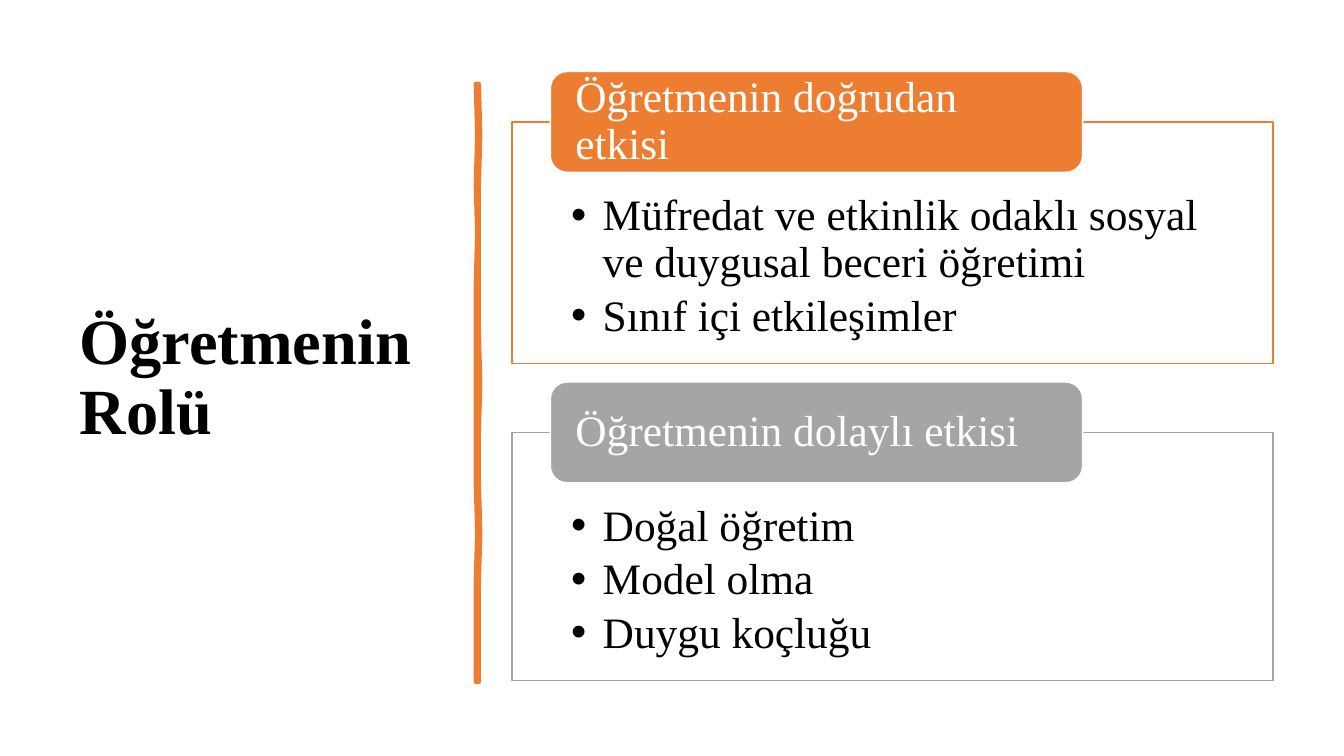
from lxml.etree import SubElement
from pptx import Presentation
from pptx.dml.color import RGBColor
from pptx.enum.shapes import MSO_SHAPE
from pptx.enum.text import MSO_ANCHOR, MSO_AUTO_SIZE, PP_ALIGN
from pptx.oxml.ns import qn
from pptx.util import Pt

# Content
TITLE = "Öğretmenin Rolü"
ORANGE, GRAY, WHITE, BLACK = "ED7D31", "A5A5A5", "FFFFFF", "000000"
PANELS = [  # heading, colour, top and height of the frame, bullets
    ("Öğretmenin doğrudan etkisi", ORANGE, 87.1, 172.8,
     ["Müfredat ve etkinlik odaklı sosyal ve duygusal beceri öğretimi",
      "Sınıf içi etkileşimler"]),
    ("Öğretmenin dolaylı etkisi", GRAY, 308.9, 177.1,
     ["Doğal öğretim", "Model olma", "Duygu koçluğu"]),
]

# Layout, in points
FRAME_LEFT, FRAME_WIDTH = 365.8, 543.6
TAB_LEFT, TAB_WIDTH, TAB_HEIGHT = 393.1, 380.2, 72
BAR_TOP, BAR_BOTTOM, BAR_LEFT, BAR_RIGHT = 60.5, 486.7, 340.4, 341.9
LEFT_WAVE = [0, 0.5, 0, 0.3, -0.6, 0, 0, -0.6, 0, 0.4, 0, -0.5, 0]
RIGHT_WAVE = [0, 0.7, 0, 0.5, 0, 0, 0.7, -0.4, 0, 0.7, 0, 0, 0]


def color(hex_code):
    return RGBColor.from_string(hex_code)


def paint(s, fill, line, width):
    s.shadow.inherit = False
    s.fill.solid()
    s.fill.fore_color.rgb = color(fill)
    s.line.color.rgb = color(line)
    s.line.width = Pt(width)


def set_frame(tf, anchor, margins):
    tf.word_wrap = True
    tf.auto_size = MSO_AUTO_SIZE.NONE
    tf.vertical_anchor = anchor
    for side, value in zip(("left", "top", "right", "bottom"), margins):
        setattr(tf, f"margin_{side}", Pt(value))


def write(p, text, size, ink, bold=False, before=0):
    p.alignment, p.line_spacing, p.space_before = PP_ALIGN.LEFT, 0.9, Pt(before)
    r = p.add_run()
    r.text = text
    font = {"name": "Times New Roman", "size": Pt(size), "bold": bold}
    for key, value in font.items():
        setattr(r.font, key, value)
    r.font.color.rgb = color(ink)


def add_bullet(p):
    pPr = p._p.get_or_add_pPr()
    pPr.set("marL", str(Pt(22.5)))
    pPr.set("indent", str(-Pt(22.5)))
    SubElement(pPr, qn("a:buFont"), typeface="Arial")
    SubElement(pPr, qn("a:buChar"), char="•")


prs = Presentation()
prs.slide_width, prs.slide_height = Pt(960), Pt(540)
slide = prs.slides.add_slide(prs.slide_layouts[5])

# Title
title = slide.shapes.title
title.left, title.top, title.width, title.height = Pt(49.7), Pt(50.4), Pt(269.3), Pt(440)
set_frame(title.text_frame, MSO_ANCHOR.MIDDLE, (7.2, 3.6, 7.2, 3.6))
write(title.text_frame.paragraphs[0], TITLE, 46, BLACK, bold=True)

# Hand-drawn divider: down the right edge, back up the left
step = (BAR_BOTTOM - BAR_TOP) / (len(LEFT_WAVE) - 1)
right = [(BAR_RIGHT + dx, BAR_TOP + i * step) for i, dx in enumerate(RIGHT_WAVE)]
left = [(BAR_LEFT + dx, BAR_TOP + i * step) for i, dx in enumerate(LEFT_WAVE)]
outline = slide.shapes.build_freeform(*right[0], scale=Pt(1))
outline.add_line_segments(right[1:] + left[::-1], close=True)
paint(outline.convert_to_shape(), ORANGE, ORANGE, 3.25)

# Panels: framed bullets with a heading tab across the top edge
for heading, accent, top, height, bullets in PANELS:
    frame = slide.shapes.add_shape(MSO_SHAPE.RECTANGLE, Pt(FRAME_LEFT), Pt(top),
                                   Pt(FRAME_WIDTH), Pt(height))
    paint(frame, WHITE, accent, 1)
    alpha = frame.fill._xPr.find(qn("a:solidFill"))[0]
    SubElement(alpha, qn("a:alpha"), val="89000")
    tf = frame.text_frame
    set_frame(tf, MSO_ANCHOR.TOP, (42.2, 51, 42.2, 17))
    for i, text in enumerate(bullets):
        p = tf.add_paragraph() if i else tf.paragraphs[0]
        write(p, text, 31, BLACK, before=4.7 if i else 0)
        add_bullet(p)

    tab = slide.shapes.add_shape(MSO_SHAPE.ROUNDED_RECTANGLE, Pt(TAB_LEFT),
                                 Pt(top - TAB_HEIGHT / 2), Pt(TAB_WIDTH), Pt(TAB_HEIGHT))
    paint(tab, accent, WHITE, 1)
    # The text area of a rounded shape is already inset by its corners
    set_frame(tab.text_frame, MSO_ANCHOR.MIDDLE, (14.4, 0, 14.4, 0))
    write(tab.text_frame.paragraphs[0], heading, 31, WHITE)

prs.save("out.pptx")
